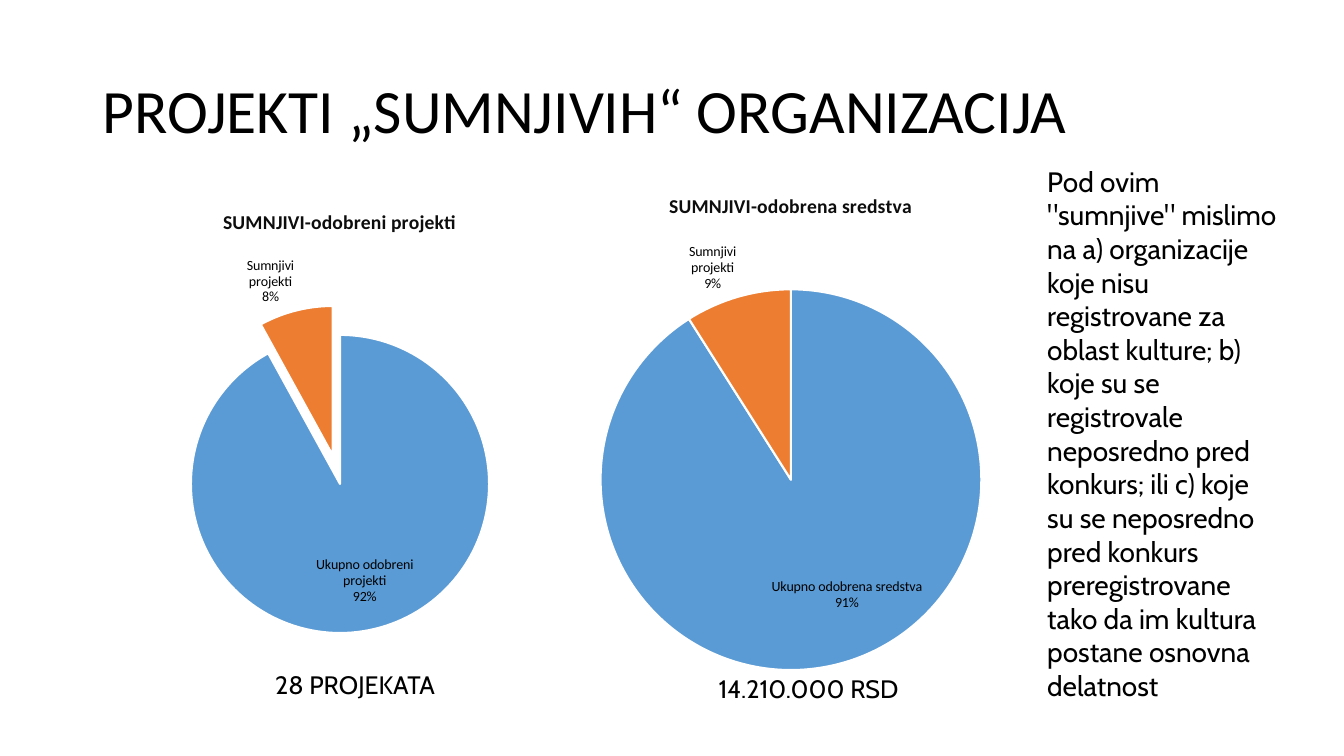
from dataclasses import dataclass

from lxml import etree
from pptx import Presentation
from pptx import util as u
from pptx.chart.data import CategoryChartData
from pptx.dml.color import RGBColor
from pptx.enum import chart as ch
from pptx.enum import text as tx
from pptx.oxml import ns

COLORS = {"text": "000000", "heading": "0D0D0D", "total": "5B9BD5",
          "suspicious": "ED7D31", "gap": "FFFFFF"}


@dataclass
class Box:
    left: float
    top: float
    width: float
    height: float

    def lengths(self) -> tuple:
        return tuple(u.Pt(v) for v in (self.left, self.top, self.width, self.height))


@dataclass
class SharePie:
    heading: str
    total_name: str
    shares: tuple
    box: Box
    center: tuple  # points on the slide
    diameter: float
    label_shift: tuple  # points, for the label of the total
    explosion: int = 0


@dataclass
class Note:
    words: str
    box: Box
    size: float


PIES = [
    SharePie("SUMNJIVI-odobreni projekti", "Ukupno odobreni projekti", (92, 8),
             Box(92.9, 135.4, 299.5, 349.2), (242.9, 345.7), 213, (27, -13), explosion=20),
    SharePie("SUMNJIVI-odobrena sredstva", "Ukupno odobrena sredstva", (91, 9),
             Box(416.9, 123.8, 295.9, 365), (565, 342.7), 272, (57, -33)),
]
NOTES = [
    Note('Pod ovim "sumnjive" mislimo na a) organizacije koje nisu registrovane za '
         "oblast kulture; b) koje su se registrovale neposredno pred konkurs; ili "
         "c) koje su se neposredno pred konkurs preregistrovane tako da im kultura "
         "postane osnovna delatnost", Box(740.9, 113.8, 180.7, 370.8), 20),
    Note("28 PROJEKATA", Box(189.4, 474.5, 135.4, 28.8), 18),
    Note("14.210.000 RSD", Box(506.2, 477.4, 146.2, 28.8), 18),
]


def rgb(name: str) -> RGBColor:
    return RGBColor.from_string(COLORS[name])


def style_font(font, *, size: float, face: str = "Calibri", color: str = "text",
               bold: bool = False) -> None:
    font.name, font.size, font.bold = face, u.Pt(size), bold
    font.color.rgb = rgb(color)


def write(frame, words: str, *, spacing: float | None = None, **font_format) -> None:
    paragraph = frame.paragraphs[0]
    paragraph.line_spacing = spacing
    run = paragraph.add_run()
    run.text = words
    style_font(run.font, **font_format)


def add_xml(parent, tag: str, index: int | None = None, **attributes):
    child = etree.Element(ns.qn(tag), attributes)
    parent.insert(len(parent) if index is None else index, child)
    return child


def add_layout(parent, index: int, **settings) -> None:
    """Give a chart part a manual layout in place of any present one."""
    for old in parent.findall(ns.qn("c:layout")):
        parent.remove(old)
    manual = add_xml(add_xml(parent, "c:layout", index), "c:manualLayout")
    for tag, value in settings.items():
        add_xml(manual, f"c:{tag}", val=str(value))


def place_plot(chart, pie: SharePie) -> None:
    """Fix the pie's frame as fractions of the chart."""
    box, (x, y), radius = pie.box, pie.center, pie.diameter / 2
    add_layout(chart._chartSpace.chart.plotArea, 0,
               layoutTarget="inner", xMode="edge", yMode="edge",
               x=(x - radius - box.left) / box.width,
               y=(y - radius - box.top) / box.height,
               w=pie.diameter / box.width, h=pie.diameter / box.height)


def label_slices(series, pie: SharePie) -> None:
    """Show category and whole percent on two lines."""
    positions = (ch.XL_LABEL_POSITION.INSIDE_END, ch.XL_LABEL_POSITION.OUTSIDE_END)
    for index, position in enumerate(positions):
        label = series.points[index].data_label
        style_font(label.font, size=10)
        label.position = position
    labels = list(series._element.iter(ns.qn("c:dLbl")))
    for label_xml in labels:
        add_xml(label_xml, "c:numFmt", 1, formatCode="0%", sourceLinked="0")
        for tag, value in (("showVal", "0"), ("showCatName", "1"), ("showPercent", "1")):
            label_xml.find(ns.qn(f"c:{tag}")).set("val", value)
        add_xml(label_xml, "c:separator").text = "\n"
    shift_x, shift_y = pie.label_shift
    add_layout(labels[0], 1, x=shift_x / pie.box.width, y=shift_y / pie.box.height)


def add_pie(slide, pie: SharePie) -> None:
    data = CategoryChartData()
    data.categories = [pie.total_name, "Sumnjivi projekti"]
    data.add_series("Series 1", pie.shares)
    chart = slide.shapes.add_chart(ch.XL_CHART_TYPE.PIE, *pie.box.lengths(), data).chart
    style_font(chart.font, size=10)
    chart.has_legend = False
    chart.has_title = True
    write(chart.chart_title.text_frame, pie.heading, size=14, color="heading", bold=True)
    chart.chart_title.include_in_layout = False
    chart.plots[0].vary_by_categories = True

    series = chart.plots[0].series[0]
    for index, color in enumerate(("total", "suspicious")):
        slice_format = series.points[index].format
        slice_format.fill.solid()
        slice_format.fill.fore_color.rgb = rgb(color)
        slice_format.line.color.rgb = rgb("gap")
        slice_format.line.width = u.Pt(1.5)
    if pie.explosion:
        suspicious = series._element.findall(ns.qn("c:dPt"))[1]
        shape_format = suspicious.find(ns.qn("c:spPr"))
        add_xml(suspicious, "c:explosion", suspicious.index(shape_format),
                val=str(pie.explosion))
    label_slices(series, pie)
    place_plot(chart, pie)


def add_note(slide, note: Note) -> None:
    frame = slide.shapes.add_textbox(*note.box.lengths()).text_frame
    frame.word_wrap = True
    frame.auto_size = tx.MSO_AUTO_SIZE.SHAPE_TO_FIT_TEXT
    write(frame, note.words, size=note.size, face="Cabin")


def main() -> None:
    deck = Presentation()
    deck.slide_width, deck.slide_height = u.Pt(960), u.Pt(540)
    slide = deck.slides.add_slide(deck.slide_layouts[5])

    # Title
    headline = slide.shapes.title
    headline.left, headline.top, headline.width, headline.height = Box(
        66, 28.8, 828, 104.4).lengths()
    headline.text_frame.vertical_anchor = tx.MSO_ANCHOR.MIDDLE
    headline.text_frame.paragraphs[0].alignment = tx.PP_ALIGN.LEFT
    write(headline.text_frame, "PROJEKTI „SUMNJIVIH“ ORGANIZACIJA", size=44, spacing=0.9)

    # Shares of suspicious projects and funds
    for pie in PIES:
        add_pie(slide, pie)

    # Explanation and totals
    for note in NOTES:
        add_note(slide, note)

    deck.save("out.pptx")


if __name__ == "__main__":
    main()
